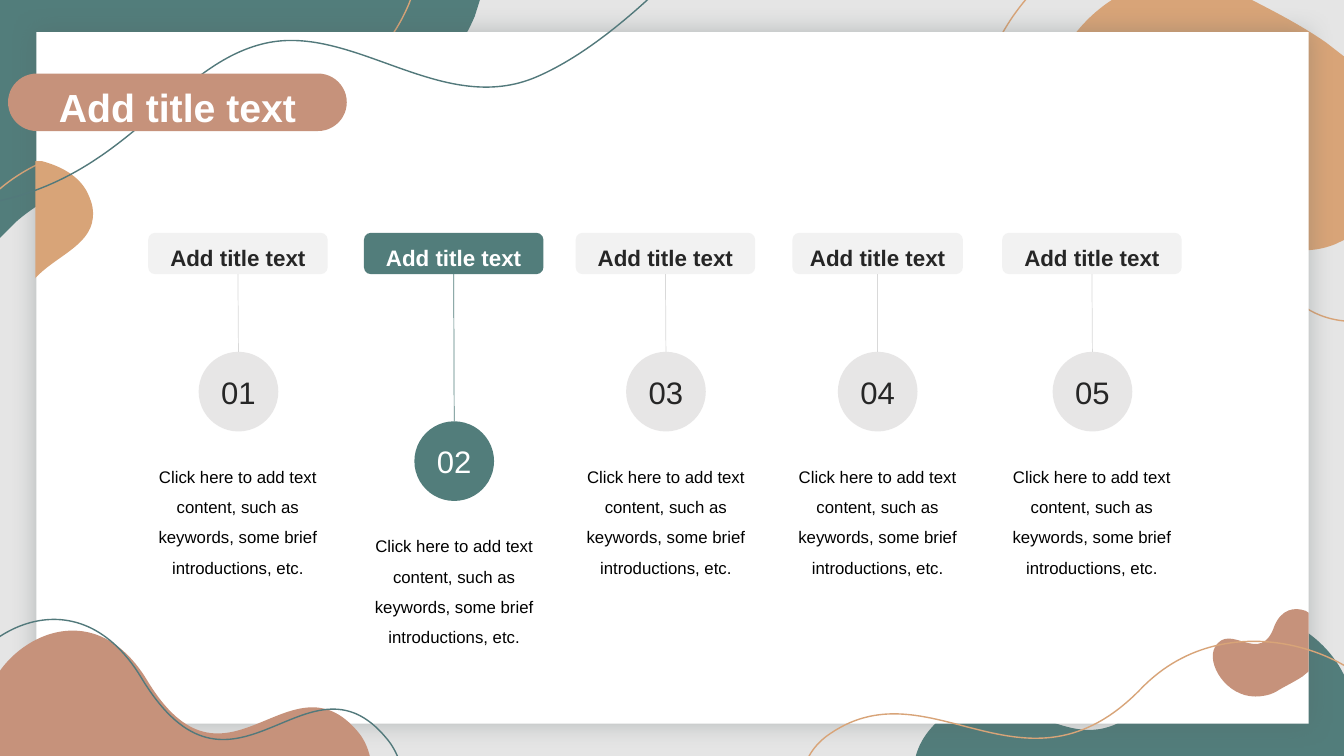
from lxml.etree import SubElement
from pptx import Presentation
from pptx.dml.color import RGBColor
from pptx.enum.shapes import MSO_CONNECTOR, MSO_SHAPE
from pptx.enum.text import MSO_ANCHOR, MSO_AUTO_SIZE, PP_ALIGN
from pptx.oxml.ns import qn
from pptx.util import Pt

PX = 9144  # EMU per px, 100 px to the inch
CURVE_STEPS = 24
THEME = {
    "font": "Arial",
    "teal": "527D7B", "teal line": "52797B", "clay": "C6927B", "sand": "D8A478",
    "white": "FFFFFF", "black": "000000", "ink": "262626", "backdrop": "808080",
    "label": "F2F2F2", "circle": "E7E6E6", "stem": "D9D9D9", "shadow": "566363",
    "title size": 28, "label size": 16, "number size": 22.2, "body size": 12,
}
BODY = "Click here to add text content, such as keywords, some brief introductions, etc."

# Outlines: start point, then segments of 2 numbers (line) or 6 numbers (cubic curve).
TEAL_HILL = [(1334, 751), (1340, 733, 1343, 714, 1340, 692), (1331, 629, 1224, 556, 1159, 665),
             (1071, 810, 1000, 631, 923, 723), (916, 731, 911, 740, 908, 751)]
TEAL_CORNER = [(0, 0), (476, 0), (471, 16), (440, 89, 365, 146, 225, 155),
               (119, 162, 54, 186, 15, 221), (0, 236)]
SAND_CORNER = [(1169, -21), (1080, -19, 1018, 81, 1047, 130), (1093, 212, 1184, 68, 1230, 196),
               (1249, 249, 1290, 256, 1325, 242), (1333, 238), (1333, 56), (1315, 42),
               (1286, 22, 1255, 7, 1234, -4), (1212, -16, 1190, -21, 1169, -21)]
SAND_CORNER_LINE = [(1161, -72), (1031, -70, 942, 76, 983, 148), (1051, 267, 1182, 57, 1249, 242),
                    (1277, 320, 1336, 330, 1387, 310), (1399, 304), (1399, 39), (1373, 19),
                    (1331, -10, 1285, -32, 1256, -48), (1222, -65, 1190, -73, 1161, -72)]
TEAL_CORNER_LINE = [(-15, -11), (411, -11), (406, 3), (379, 69, 311, 121, 186, 129),
                    (91, 136, 33, 158, -2, 189), (-15, 203)]
CLAY_HILL = [(-8, 751), (-15, 735, -17, 718, -14, 699), (-7, 643, 88, 579, 146, 675),
             (224, 804, 287, 645, 355, 726), (361, 733, 365, 742, 367, 751)]
SAND_DROP = [(92, 217), (89, 244, 54, 255, 35, 276), (35, 277), (35, 160), (42, 160),
             (64, 166, 81, 177, 88, 194), (92, 203, 93, 210, 92, 217)]
CLAY_HILL_LINE = [(-41, 761), (-48, 743, -51, 722, -48, 700), (-39, 635, 72, 560, 140, 672),
                  (231, 823, 304, 637, 383, 732), (390, 740, 395, 750, 398, 761)]
TOP_WAVE = [(-479, 232), (-297, 230, -114, 228, 9, 197), (133, 165, 176, 63, 263, 43),
            (351, 23, 439, 117, 533, 76), (627, 35, 728, -85, 828, -205)]
CLAY_DROP = [(1245, 691), (1216, 691, 1196, 658, 1205, 642), (1220, 616, 1250, 662, 1264, 621),
             (1271, 604, 1284, 602, 1295, 606), (1298, 608), (1298, 666), (1292, 671),
             (1283, 677, 1272, 682, 1266, 686), (1259, 690, 1251, 691, 1245, 691)]
SAND_HILL_LINE = [(1365, 755), (1374, 740, 1378, 724, 1374, 705), (1362, 653, 1220, 592, 1132, 683),
                  (1015, 804, 921, 655, 819, 731), (810, 738, 804, 746, 800, 755)]


def trace(outline, fill=None, line=None):
    """Draw an outline as a freeform, closed unless it is the open top wave."""
    # Points along the curves give the freeform its true extent.
    points = [outline[0]]
    for segment in outline[1:]:
        if len(segment) == 2:
            points.append(segment)
            continue
        x0, y0 = points[-1]
        x1, y1, x2, y2, x3, y3 = segment
        for step in range(1, CURVE_STEPS + 1):
            t = step / CURVE_STEPS
            a, b, c, d = (1 - t) ** 3, 3 * t * (1 - t) ** 2, 3 * t * t * (1 - t), t ** 3
            points.append((a * x0 + b * x1 + c * x2 + d * x3, a * y0 + b * y1 + c * y2 + d * y3))
    points = [(x * PX, y * PX) for x, y in points]
    builder = shapes.build_freeform(*points[0], scale=1.0)
    builder.add_line_segments(points[1:], close=False)
    shape = builder.convert_to_shape()

    # The segments themselves are lines and smooth curves.
    route = next(shape.element.iter(qn("a:path")))
    for step in route.findall(qn("a:lnTo")):
        route.remove(step)
    for segment in outline[1:]:
        step = SubElement(route, qn("a:lnTo" if len(segment) == 2 else "a:cubicBezTo"))
        for x, y in zip(segment[::2], segment[1::2]):
            SubElement(step, qn("a:pt"), x=str(x * PX - shape.left), y=str(y * PX - shape.top))
    if outline is not TOP_WAVE:
        SubElement(route, qn("a:close"))

    shape.shadow.inherit = False
    if fill:
        shape.fill.solid()
        shape.fill.fore_color.rgb = RGBColor.from_string(THEME[fill])
        shape.line.fill.background()
    else:
        shape.fill.background()
        shape.line.color.rgb = RGBColor.from_string(THEME[line])
        shape.line.width = Pt(1)


def write(shape, text, size, color, bold=False, spacing=1.0, top=5, anchor=MSO_ANCHOR.TOP):
    frame = shape.text_frame
    frame.text = text
    paragraph = frame.paragraphs[0]
    font = paragraph.runs[0].font
    frame_format = {"word_wrap": True, "auto_size": MSO_AUTO_SIZE.NONE, "vertical_anchor": anchor,
                    "margin_left": 10 * PX, "margin_right": 10 * PX,
                    "margin_top": top * PX, "margin_bottom": 5 * PX}
    paragraph_format = {"alignment": PP_ALIGN.CENTER, "line_spacing": spacing}
    font_format = {"name": THEME["font"], "size": Pt(THEME[size]), "bold": bold}
    for target, values in ((frame, frame_format), (paragraph, paragraph_format), (font, font_format)):
        for name, value in values.items():
            setattr(target, name, value)
    font.color.rgb = RGBColor.from_string(THEME[color])


presentation = Presentation()
presentation.slide_width, presentation.slide_height = 1333 * PX, 750 * PX
slide = presentation.slides.add_slide(presentation.slide_layouts[5])
shapes = slide.shapes
filled = []  # preset shapes with their fill colours

# Backdrop and the decoration behind the sheet
backdrop = shapes.add_shape(MSO_SHAPE.RECTANGLE, 0, -1 * PX, 1333 * PX, 752 * PX)
filled.append((backdrop, "backdrop"))
for outline, color in ((TEAL_HILL, "teal"), (TEAL_CORNER, "teal"), (SAND_CORNER, "sand")):
    trace(outline, fill=color)
for outline in (SAND_CORNER_LINE, TEAL_CORNER_LINE):
    trace(outline, line="sand")

# Sheet and the decoration on it
sheet = shapes.add_shape(MSO_SHAPE.RECTANGLE, 36 * PX, 32 * PX, 1262 * PX, 686 * PX)
filled.append((sheet, "white"))
trace(CLAY_HILL, fill="clay")
trace(SAND_DROP, fill="sand")
trace(CLAY_HILL_LINE, line="teal line")
trace(TOP_WAVE, line="teal line")
trace(CLAY_DROP, fill="clay")
trace(SAND_HILL_LINE, line="sand")

# Title on its pill
pill = shapes.add_shape(MSO_SHAPE.ROUNDED_RECTANGLE, 8 * PX, 73 * PX, 336 * PX, 57 * PX)
pill.adjustments[0] = 0.5
filled.append((pill, "clay"))
title = shapes.title
title.left, title.top, title.width, title.height = 37 * PX, 74 * PX, 278 * PX, 57 * PX
write(title, "Add title text", "title size", "white", bold=True, top=9)
pill.element.addnext(title.element)

# Five columns: centre, label width, body width
columns = [(236, 178, 190), (450, 178, 183), (660, 178, 183), (870, 169, 183), (1083, 178, 190)]
for number, (center, label_width, body_width) in enumerate(columns, 1):
    active = number == 2
    drop = 69 if active else 0
    ink = "white" if active else "ink"

    label = shapes.add_shape(MSO_SHAPE.ROUNDED_RECTANGLE, (center - label_width // 2) * PX, 231 * PX,
                             label_width * PX, 41 * PX)
    filled.append((label, "teal" if active else "label"))
    write(label, "Add title text", "label size", ink, bold=True, top=9)

    circle = shapes.add_shape(MSO_SHAPE.OVAL, (center - 39) * PX, (349 + drop) * PX, 79 * PX, 79 * PX)
    filled.append((circle, "teal" if active else "circle"))
    write(circle, f"{number:02}", "number size", ink, anchor=MSO_ANCHOR.MIDDLE)

    stem = shapes.add_connector(MSO_CONNECTOR.STRAIGHT, 0, 0, 0, 0)
    stem.begin_connect(label, 2)
    stem.end_connect(circle, 0)
    stem.line.color.rgb = RGBColor.from_string(THEME["teal" if active else "stem"])
    stem.line.width = Pt(0.5)
    SubElement(stem.element.spPr, qn("a:effectLst"))

    body = shapes.add_textbox((center - body_width // 2) * PX, (448 + drop) * PX,
                              body_width * PX, 94 * PX)
    write(body, BODY, "body size", "black", spacing=1.5)

for shape, color in filled:
    shape.shadow.inherit = False
    shape.fill.solid()
    shape.fill.fore_color.rgb = RGBColor.from_string(THEME[color])
    shape.line.fill.background()

# Transparency of the backdrop, soft shadow of the sheet
backdrop_color = backdrop.element.spPr.find(qn("a:solidFill"))[0]
SubElement(backdrop_color, qn("a:alpha"), val="20000")
effects = sheet.element.spPr.find(qn("a:effectLst"))
shadow = SubElement(effects, qn("a:outerShdw"), blurRad=str(Pt(17)), dist="0", dir="0", rotWithShape="0")
shadow_color = SubElement(shadow, qn("a:srgbClr"), val=THEME["shadow"])
SubElement(shadow_color, qn("a:alpha"), val="35000")

presentation.save("out.pptx")
